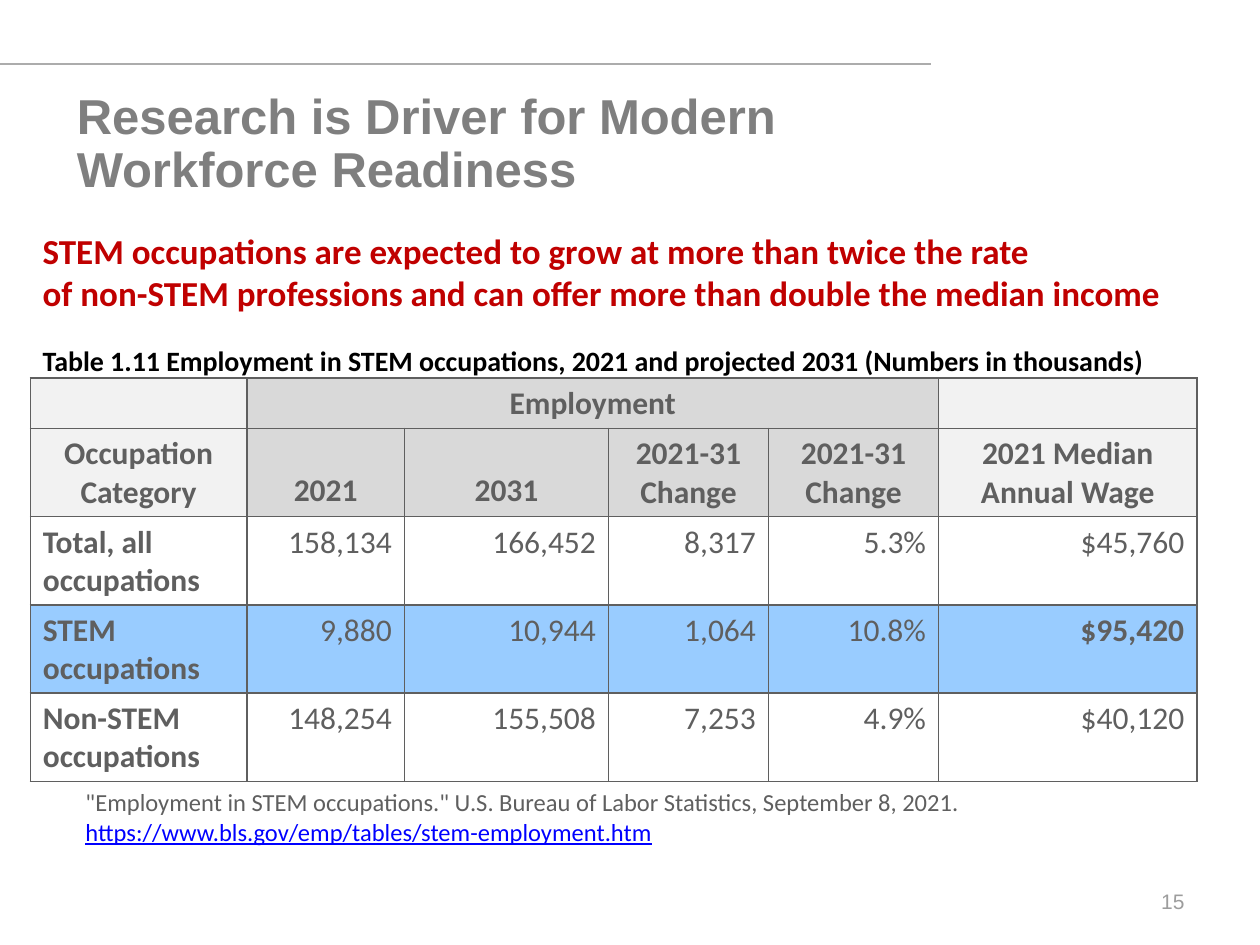
from dataclasses import dataclass

from lxml.etree import SubElement
from pptx import Presentation
from pptx.dml.color import RGBColor
from pptx.enum.shapes import MSO_CONNECTOR as Connector
from pptx.enum.text import MSO_ANCHOR as Anchor, MSO_AUTO_SIZE as AutoSize, PP_ALIGN as Align
from pptx.oxml.ns import qn
from pptx.util import Emu, Pt

PX = 9144  # 100 px to the inch


@dataclass(frozen=True)
class Theme:
    heading_font: str = "Arial"
    body_font: str = "Calibri"
    title: str = "7F7F7F"
    rule: str = "ACACAC"
    number: str = "9D9D9D"
    text: str = "5F5F5F"
    accent: str = "C00000"
    caption: str = "000000"
    link: str = "0000FF"
    side_head: str = "F2F2F2"
    mid_head: str = "D9D9D9"
    highlight: str = "99CCFF"
    title_size: int = 28
    lead_size: int = 20
    table_size: int = 18
    caption_size: int = 16
    source_size: int = 14
    number_size: int = 12


THEME = Theme()
COLUMNS = [172, 125, 162, 127, 135, 205]
ROW_HEIGHTS = [40, 70, 70, 70, 70]
ROWS = [
    ["", "Employment", "", "", "", ""],
    ["Occupation Category", "2021", "2031", "2021-31 Change", "2021-31 Change",
     "2021 Median Annual Wage"],
    ["Total, all occupations", "158,134", "166,452", "8,317", "5.3%", "$45,760"],
    ["STEM occupations", "9,880", "10,944", "1,064", "10.8%", "$95,420"],
    ["Non-STEM occupations", "148,254", "155,508", "7,253", "4.9%", "$40,120"],
]
HEADER_ROWS = 2
STEM_ROW = 3


def px(*lengths):
    return [Emu(length * PX) for length in lengths]


def style(para, size, color, bold=False, font=THEME.body_font):
    for span in para.runs:
        span.font.name = font
        span.font.size = Pt(size)
        span.font.bold = bold
        span.font.color.rgb = RGBColor.from_string(color)


def add_title(page, text, *place):
    title = page.shapes.title
    title.left, title.top, title.width, title.height = px(*place)
    frame = title.text_frame
    frame.text = text
    frame.auto_size = AutoSize.NONE
    frame.vertical_anchor = Anchor.TOP
    para = frame.paragraphs[0]
    para.alignment = Align.LEFT
    para.line_spacing = 0.9
    style(para, THEME.title_size, THEME.title, True, THEME.heading_font)


def add_text(page, place, text, *look):
    """Add a wrapping text box, one paragraph per line, and return its frame."""
    frame = page.shapes.add_textbox(*px(*place)).text_frame
    frame.word_wrap = True
    frame.text = text
    for para in frame.paragraphs:
        style(para, *look)
    return frame


def add_rule(page, *ends):
    rule = page.shapes.add_connector(Connector.STRAIGHT, *px(*ends))
    rule.line.color.rgb = RGBColor.from_string(THEME.rule)
    rule.line.width = Pt(1.25)
    SubElement(rule._element.spPr, qn("a:effectLst"))


def add_borders(cell):
    properties = cell._tc.get_or_add_tcPr()
    for side in ("L", "R", "T", "B"):
        line = SubElement(properties, qn(f"a:ln{side}"), w=str(Pt(1)))
        fill = SubElement(line, qn("a:solidFill"))
        SubElement(fill, qn("a:srgbClr"), val=THEME.text)


def cell_fill(row, column):
    if row < HEADER_ROWS:
        return THEME.side_head if column in (0, len(COLUMNS) - 1) else THEME.mid_head
    return THEME.highlight if row == STEM_ROW else None


def format_cell(cell, row, column):
    add_borders(cell)
    color = cell_fill(row, column)
    if color:
        cell.fill.solid()
        cell.fill.fore_color.rgb = RGBColor.from_string(color)
    else:
        cell.fill.background()
    header = row < HEADER_ROWS
    wage = row == STEM_ROW and column == len(COLUMNS) - 1
    cell.vertical_anchor = Anchor.BOTTOM if row == 1 else Anchor.TOP
    para = cell.text_frame.paragraphs[0]
    if header:
        para.alignment = Align.CENTER
    else:
        para.alignment = Align.RIGHT if column else Align.LEFT
    style(para, THEME.table_size, THEME.text, header or column == 0 or wage)


def add_employment_table(page, left, top):
    place = px(left, top, sum(COLUMNS), sum(ROW_HEIGHTS))
    table = page.shapes.add_table(len(ROWS), len(COLUMNS), *place).table
    table.first_row = table.horz_banding = False
    for column, width in zip(table.columns, px(*COLUMNS)):
        column.width = width
    for row, height in zip(table.rows, px(*ROW_HEIGHTS)):
        row.height = height
    for row, texts in enumerate(ROWS):
        for column, text in enumerate(texts):
            cell = table.cell(row, column)
            cell.text = text
            format_cell(cell, row, column)
    table.cell(0, 1).merge(table.cell(0, 4))


def main():
    deck = Presentation()
    deck.slide_width, deck.slide_height = px(1000, 750)
    page = deck.slides.add_slide(deck.slide_layouts[5])

    add_rule(page, 0, 51, 739, 51)
    add_title(page, "Research is Driver for Modern Workforce Readiness", 51, 68, 708, 110)

    number = add_text(page, (717, 695, 233, 40), "15",
                      THEME.number_size, THEME.number, False, THEME.heading_font)
    number.vertical_anchor = Anchor.MIDDLE
    number.paragraphs[0].alignment = Align.RIGHT

    source = add_text(
        page, (58, 620, 885, 57),
        '"Employment in STEM occupations." U.S. Bureau of Labor Statistics, September 8, 2021.\n'
        "https://www.bls.gov/emp/tables/stem-employment.htm",
        THEME.source_size, THEME.text)
    address = source.paragraphs[1]
    style(address, THEME.source_size, THEME.link)
    address.runs[0].font.underline = True

    add_text(
        page, (24, 177, 926, 77),
        "STEM occupations are expected to grow at more than twice the rate\n"
        "of non-STEM professions and can offer more than double the median income",
        THEME.lead_size, THEME.accent, True)
    add_employment_table(page, 24, 300)
    add_text(
        page, (24, 268, 926, 37),
        "Table 1.11 Employment in STEM occupations, 2021 and projected 2031 (Numbers in thousands)",
        THEME.caption_size, THEME.caption, True)

    deck.save("out.pptx")


if __name__ == "__main__":
    main()
